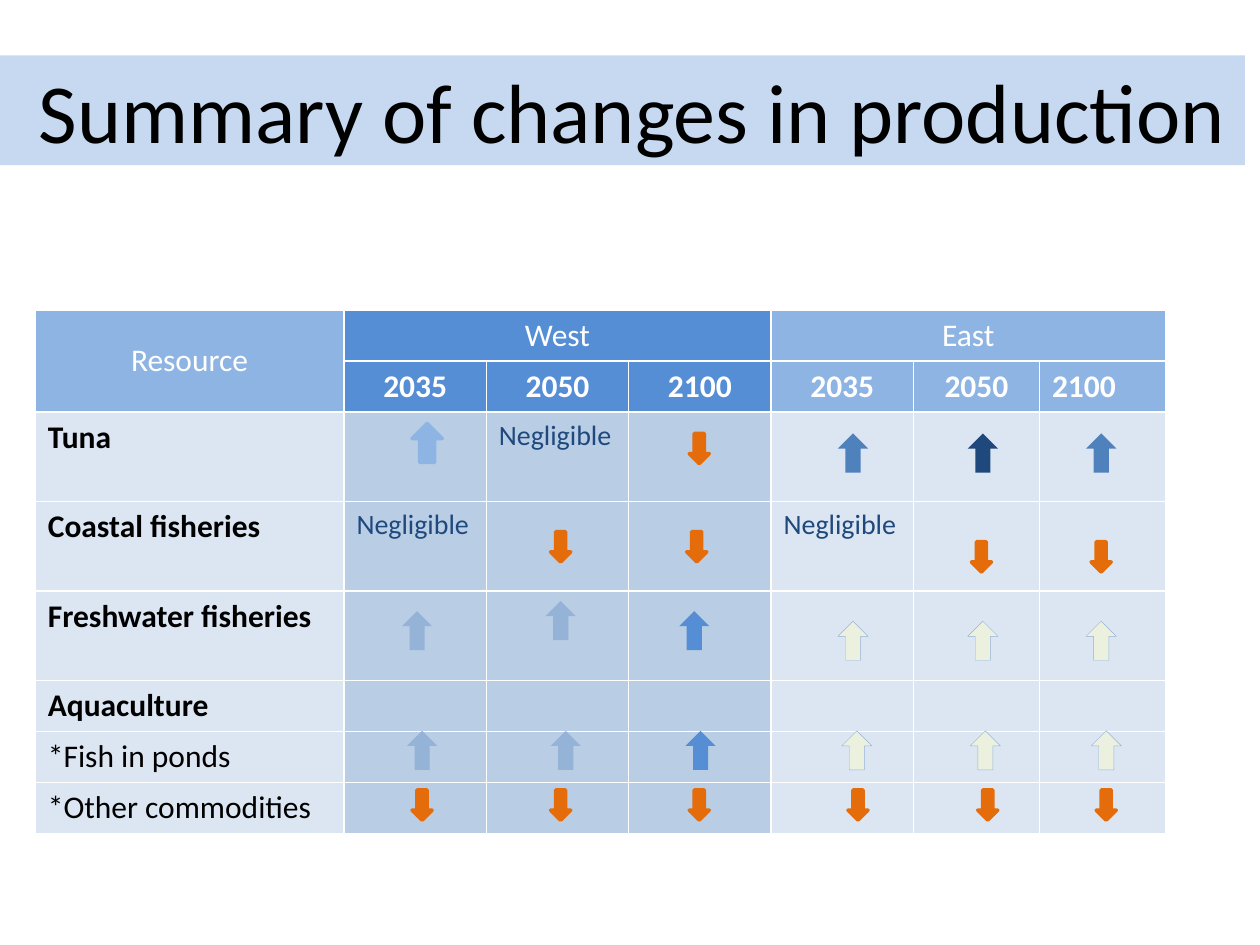
"""Build the slide that summarises changes in fisheries production."""

from dataclasses import dataclass
from typing import Optional

from lxml.etree import SubElement
from pptx import Presentation
from pptx.dml.color import RGBColor
from pptx.enum.shapes import MSO_SHAPE as Preset
from pptx.enum.text import MSO_ANCHOR as Anchor, MSO_AUTO_SIZE as AutoSize, PP_ALIGN as Align
from pptx.oxml.ns import qn
from pptx.util import Inches, Pt


@dataclass(frozen=True)
class Theme:
    font: str = "Calibri"
    title_size: int = 48
    body_size: int = 18
    note_size: int = 16
    white: str = "FFFFFF"
    black: str = "000000"
    band: str = "C6D9F1"
    navy: str = "1F497D"
    blue: str = "4F81BD"
    west_head: str = "558ED5"
    east_head: str = "8EB4E3"
    west_body: str = "B9CDE5"
    east_body: str = "DCE6F2"
    soft_blue: str = "95B3D7"
    pale_green: str = "EBF1DE"
    orange: str = "E46C0A"


THEME = Theme()


@dataclass(frozen=True)
class ArrowStyle:
    fill: str
    line: Optional[str] = None
    line_width: float = 0
    width: float = 0.24
    height: float = 0.31
    rotation: int = 180


@dataclass(frozen=True)
class ArrowRow:
    style: ArrowStyle
    top: float
    lefts: tuple[float, ...]


@dataclass(frozen=True)
class Resource:
    name: str
    height: float
    bold: bool = True
    negligible: tuple[int, ...] = ()


FALL = ArrowStyle(THEME.orange, THEME.orange, 2, 0.16, 0.24, 0)
SLIGHT_RISE = ArrowStyle(THEME.pale_green, THEME.soft_blue, 0.25)
SOFT_RISE = ArrowStyle(THEME.soft_blue)
STRONG_RISE = ArrowStyle(THEME.west_head)
TUNA_WEST_RISE = ArrowStyle(THEME.east_head, THEME.east_head, 2)
TUNA_EAST_RISE = ArrowStyle(THEME.blue)
TUNA_PEAK_RISE = ArrowStyle(THEME.navy)

ARROW_ROWS = (
    ArrowRow(TUNA_WEST_RISE, 3.36, (3.27,)),
    ArrowRow(FALL, 3.44, (5.47,)),
    ArrowRow(TUNA_EAST_RISE, 3.44, (6.65, 8.62)),
    ArrowRow(TUNA_PEAK_RISE, 3.44, (7.68,)),
    ArrowRow(FALL, 4.22, (4.37, 5.45)),
    ArrowRow(FALL, 4.3, (7.71, 8.66)),
    ArrowRow(SOFT_RISE, 4.85, (3.19,)),
    ArrowRow(SOFT_RISE, 4.77, (4.33,)),
    ArrowRow(STRONG_RISE, 4.85, (5.39,)),
    ArrowRow(SLIGHT_RISE, 4.93, (6.65, 7.68, 8.62)),
    ArrowRow(SOFT_RISE, 5.8, (3.23, 4.37)),
    ArrowRow(STRONG_RISE, 5.8, (5.44,)),
    ArrowRow(SLIGHT_RISE, 5.8, (6.68, 7.7, 8.66)),
    ArrowRow(FALL, 6.27, (3.27, 4.37, 5.47, 6.73, 7.76, 8.7)),
)

HEAD_HEIGHT = 0.4
RESOURCES = (
    Resource("Tuna", 0.71, negligible=(2,)),
    Resource("Coastal fisheries", 0.71, negligible=(1, 4)),
    Resource("Freshwater fisheries", 0.71),
    Resource("Aquaculture", 0.4),
    Resource("*Fish in ponds", 0.4, bold=False),
    Resource("*Other commodities", 0.4, bold=False),
)
YEARS = ("2035", "2050", "2100")
COLUMN_WIDTHS = (2.45, 1.13, 1.13, 1.13, 1.13, 1, 1)
WEST_COLUMNS = range(1, 4)


def write(frame, text: str, *, size: int = THEME.body_size, color: str = THEME.black,
          bold: bool = False, align=Align.LEFT) -> None:
    """Put one formatted line of text in a text frame."""
    para = frame.paragraphs[0]
    para.alignment = align
    span = para.add_run()
    span.text = text
    span.font.name = THEME.font
    span.font.size = Pt(size)
    span.font.bold = bold
    span.font.color.rgb = RGBColor.from_string(color)


def paint(fill, color: str) -> None:
    """Give a fill one solid colour."""
    fill.solid()
    fill.fore_color.rgb = RGBColor.from_string(color)


def style_cell(cell, color: str) -> None:
    """Give a cell its fill and thin white borders."""
    properties = cell._tc.get_or_add_tcPr()
    for side in ("lnL", "lnR", "lnT", "lnB"):
        border = SubElement(properties, qn(f"a:{side}"), w=str(Pt(1)))
        solid = SubElement(border, qn("a:solidFill"))
        SubElement(solid, qn("a:srgbClr"), val=THEME.white)
    paint(cell.fill, color)


def add_title(page) -> None:
    """Place the title on its coloured band."""
    title = page.shapes.title
    title.left, title.top = Inches(-0.12), Inches(0.44)
    title.width, title.height = Inches(10), Inches(0.87)
    paint(title.fill, THEME.band)
    frame = title.text_frame
    frame.auto_size = AutoSize.NONE
    frame.vertical_anchor = Anchor.MIDDLE
    frame.margin_left, frame.margin_right = Inches(0.28), Inches(0)
    write(frame, "Summary of changes in production", size=THEME.title_size, align=Align.CENTER)


def add_production_table(page) -> None:
    """Draw the table of resources by region and year."""
    heights = [HEAD_HEIGHT] * 2 + [resource.height for resource in RESOURCES]
    table = page.shapes.add_table(
        len(heights), len(COLUMN_WIDTHS), Inches(0.28), Inches(2.46),
        Inches(sum(COLUMN_WIDTHS)), Inches(sum(heights))).table
    for column, width in zip(table.columns, COLUMN_WIDTHS):
        column.width = Inches(width)
    for index, height in enumerate(heights):
        table.rows[index].height = Inches(height)
        for column in range(len(COLUMN_WIDTHS)):
            west = column in WEST_COLUMNS
            if index < 2:
                color = THEME.west_head if west else THEME.east_head
            else:
                color = THEME.west_body if west else THEME.east_body
            style_cell(table.cell(index, column), color)

    corner = table.cell(0, 0)
    corner.merge(table.cell(1, 0))
    corner.vertical_anchor = Anchor.MIDDLE
    write(corner.text_frame, "Resource", color=THEME.white, align=Align.CENTER)
    for region, first in (("West", 1), ("East", 4)):
        head = table.cell(0, first)
        head.merge(table.cell(0, first + 2))
        write(head.text_frame, region, color=THEME.white, align=Align.CENTER)
    for column, year in enumerate(YEARS * 2, start=1):
        align = Align.LEFT if column == len(YEARS) * 2 else Align.CENTER
        write(table.cell(1, column).text_frame, year, color=THEME.white, bold=True, align=align)
    for index, resource in enumerate(RESOURCES, start=2):
        write(table.cell(index, 0).text_frame, resource.name, bold=resource.bold)
        for column in resource.negligible:
            write(table.cell(index, column).text_frame, "Negligible",
                  size=THEME.note_size, color=THEME.navy)


def add_arrow(page, style: ArrowStyle, left: float, top: float) -> None:
    """Draw one arrow of change."""
    arrow = page.shapes.add_shape(
        Preset.DOWN_ARROW, Inches(left), Inches(top), Inches(style.width), Inches(style.height))
    arrow.rotation = style.rotation
    arrow.shadow.inherit = False
    paint(arrow.fill, style.fill)
    if style.line:
        paint(arrow.line.fill, style.line)
        arrow.line.width = Pt(style.line_width)
    else:
        arrow.line.fill.background()


def main() -> None:
    """Build and save the deck."""
    deck = Presentation()
    deck.slide_width, deck.slide_height = Inches(10), Inches(7.5)
    page = deck.slides.add_slide(deck.slide_layouts[5])
    add_title(page)
    add_production_table(page)
    for row in ARROW_ROWS:
        for left in row.lefts:
            add_arrow(page, row.style, left, row.top)
    deck.save("out.pptx")


if __name__ == "__main__":
    main()
